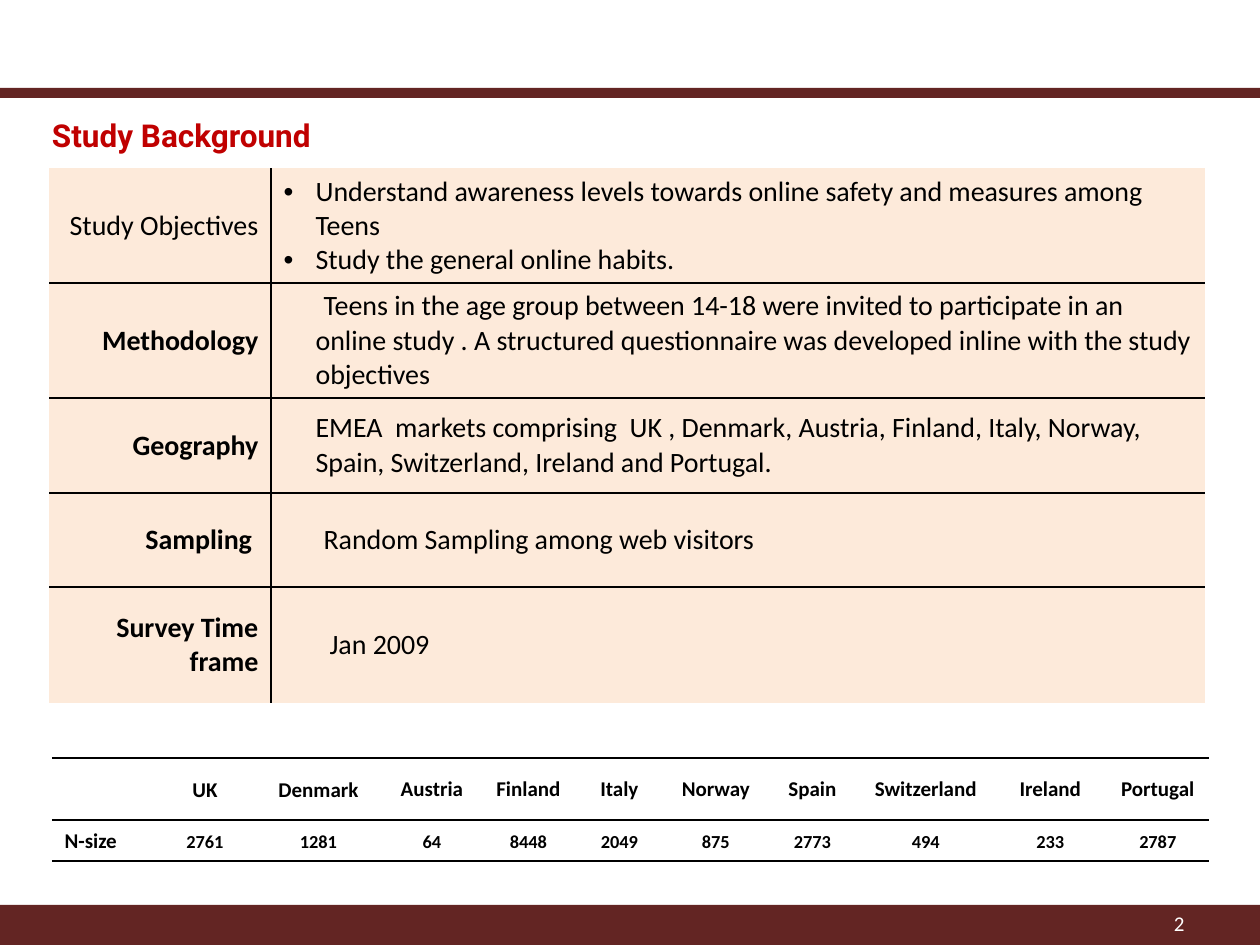
from pptx import Presentation
from pptx import util as u
from pptx.dml.color import RGBColor
from pptx.enum import shapes, text
from pptx.oxml.ns import qn
from lxml import etree

PX = u.Inches(1) / 126
BLACK, MAROON, WHITE, PEACH = "000000", "632523", "FFFFFF", "FDEADA"
LEFT, CENTER, RIGHT = text.PP_ALIGN.LEFT, text.PP_ALIGN.CENTER, text.PP_ALIGN.RIGHT


def write(para, words, size, color=BLACK, bold=False, align=LEFT, face="Calibri"):
    para.alignment = align
    span = para.add_run()
    span.text = words
    span.font.name = face
    span.font.size = u.Pt(size)
    span.font.bold = bold
    span.font.color.rgb = RGBColor.from_string(color)


def set_borders(cell, sides):
    props = cell._tc.get_or_add_tcPr()
    for side in "LRTB":
        line = etree.SubElement(props, qn(f"a:ln{side}"), w=str(u.Pt(1)))
        if side in sides:
            fill = etree.SubElement(line, qn("a:solidFill"))
            etree.SubElement(fill, qn("a:srgbClr"), val=BLACK)
        else:
            etree.SubElement(line, qn("a:noFill"))


deck = Presentation()
deck.slide_width, deck.slide_height = u.Inches(10), u.Inches(7.5)
page = deck.slides.add_slide(deck.slide_layouts[6])

blocks = [
    (0, 905, 1260, 40, MAROON),
    (0, 88, 1260, 10, MAROON),
    (52, 116, 949, 38, WHITE),
]
for left, top, width, height, color in blocks:
    block = page.shapes.add_shape(
        shapes.MSO_SHAPE.RECTANGLE,
        *(int(n * PX) for n in (left, top, width, height)))
    block.shadow.inherit = False
    block.fill.solid()
    block.fill.fore_color.rgb = RGBColor.from_string(color)
    block.line.fill.background()

frame = block.text_frame
frame.margin_left = frame.margin_right = frame.margin_top = frame.margin_bottom = 0
frame.vertical_anchor = text.MSO_ANCHOR.TOP
write(frame.paragraphs[0], "Study Background", 18, "C00000", True, face="Roboto")

box = page.shapes.add_textbox(*(int(n * PX) for n in (903, 898, 294, 50)))
box.text_frame.word_wrap = True
box.text_frame.vertical_anchor = text.MSO_ANCHOR.MIDDLE
write(box.text_frame.paragraphs[0], "2", 12, WHITE, align=RIGHT)

topics = [
    ("Study Objectives", 115, -32, [
        "Understand awareness levels towards online safety and measures among Teens",
        "Study the general online habits."]),
    ("Methodology", 115, 8, [
        "Teens in the age group between 14-18 were invited to participate in an "
        "online study . A structured questionnaire was developed inline with the "
        "study objectives"]),
    ("Geography", 95, 0, [
        "EMEA  markets comprising  UK , Denmark, Austria, Finland, Italy, Norway, "
        "Spain, Switzerland, Ireland and Portugal."]),
    ("Sampling ", 94, 8, ["Random Sampling among web visitors"]),
    ("Survey Time frame", 116, 14, ["Jan 2009"]),
]
background = page.shapes.add_table(
    len(topics), 2, *(int(n * PX) for n in (49, 168, 1156, 535))).table
background.first_row = background.horz_banding = False
for column, width in zip(background.columns, (222, 934)):
    column.width = int(width * PX)

for i, (topic, height, indent, details) in enumerate(topics):
    background.rows[i].height = int(height * PX)
    label, detail = background.cell(i, 0), background.cell(i, 1)
    rules = ("T" if i else "") + ("B" if i < len(topics) - 1 else "")
    for cell, side in ((label, "R"), (detail, "L")):
        set_borders(cell, rules + side)
        cell.fill.solid()
        cell.fill.fore_color.rgb = RGBColor.from_string(PEACH)
        cell.vertical_anchor = text.MSO_ANCHOR.MIDDLE
    write(label.text_frame.paragraphs[0], topic, 16, bold=i > 0, align=RIGHT)
    for j, words in enumerate(details):
        frame = detail.text_frame
        para = frame.add_paragraph() if j else frame.paragraphs[0]
        props = para._p.get_or_add_pPr()
        props.set("marL", str(int(32 * PX)))
        props.set("indent", str(int(indent * PX)))
        if indent < 0:
            etree.SubElement(props, qn("a:buFont"), typeface="Arial")
            etree.SubElement(props, qn("a:buChar"), char="•")
        write(para, words, 16)

samples = [
    ("", "N-size", 102), ("UK", "2761", 102), ("Denmark", "1281", 125),
    ("Austria", "64", 102), ("Finland", "8448", 91), ("Italy", "2049", 91),
    ("Norway", "875", 102), ("Spain", "2773", 91), ("Switzerland", "494", 136),
    ("Ireland", "233", 113), ("Portugal", "2787", 102),
]
sizes = page.shapes.add_table(
    2, len(samples), *(int(n * PX) for n in (52, 758, 1157, 103))).table
sizes.first_row = sizes.horz_banding = False
for row, height in zip(sizes.rows, (62, 41)):
    row.height = int(height * PX)

for i, (country, count, width) in enumerate(samples):
    sizes.columns[i].width = int(width * PX)
    for j, words in enumerate((country, count)):
        cell = sizes.cell(j, i)
        set_borders(cell, "TB")
        cell.fill.background()
        cell.vertical_anchor = text.MSO_ANCHOR.MIDDLE
        is_count = j == 1 and i > 0
        if is_count:
            cell.margin_left = cell.margin_right = cell.margin_top = int(PX)
            cell.margin_bottom = 0
        if words:
            para = cell.text_frame.paragraphs[0]
            if j == 1 or i < 3:
                para.line_spacing = 1.1
            write(para, words, 10.5 if is_count else 12, bold=True,
                  align=CENTER if i else LEFT)

deck.save("out.pptx")
